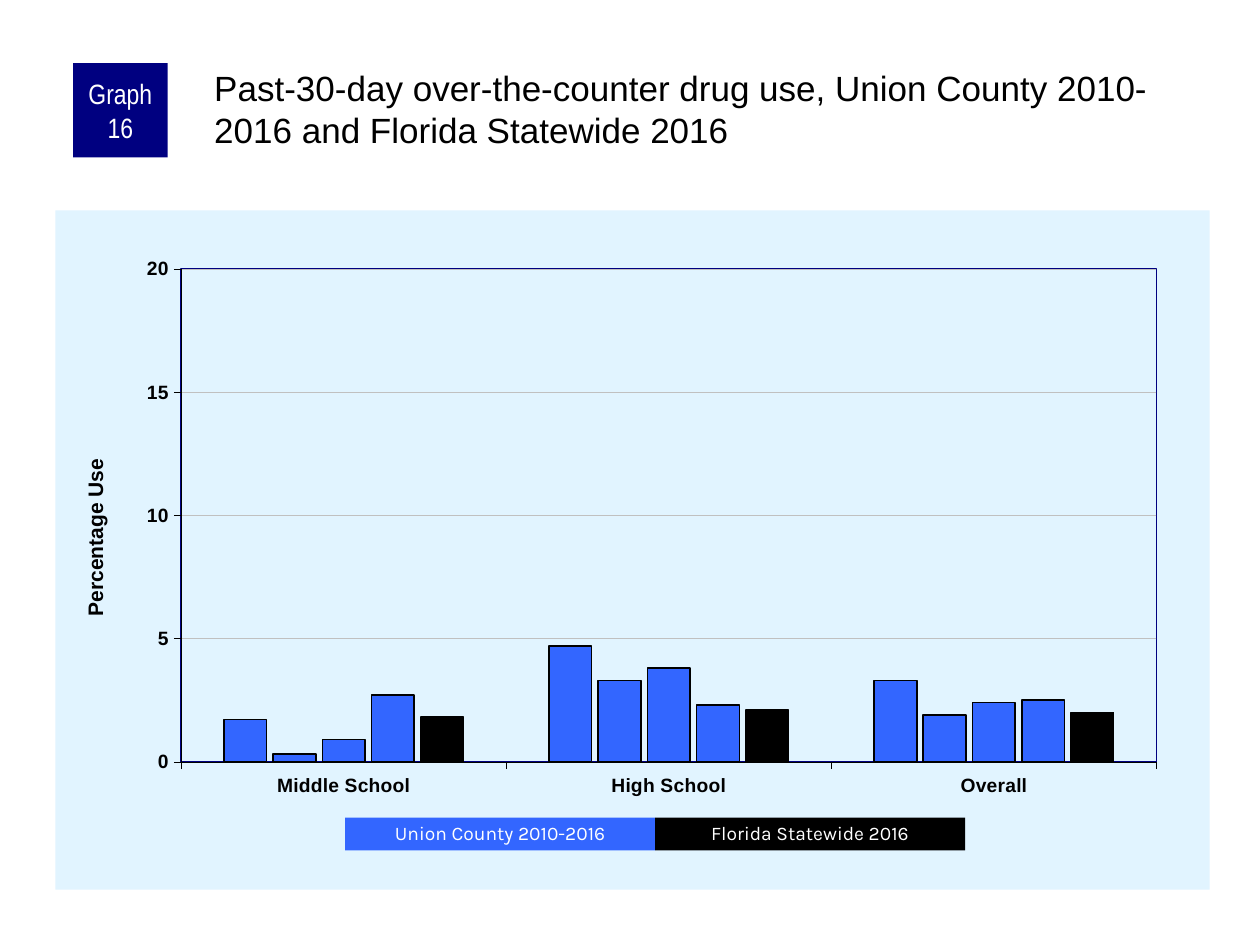
from lxml import etree
from pptx import Presentation
from pptx.chart.data import CategoryChartData
from pptx.dml.color import RGBColor
from pptx.enum import chart as charts, shapes, text
from pptx.oxml import parse_xml
from pptx.oxml.ns import nsdecls, qn
from pptx.util import Inches, Pt

COLORS = {"navy": "000080", "blue": "3366FF", "black": "000000",
          "white": "FFFFFF", "panel": "E1F4FF", "grid": "C0C0C0"}

TITLE = ("Past-30-day over-the-counter drug use, Union County 2010-2016 "
         "and Florida Statewide 2016")
SCHOOLS = ["Middle School", "High School", "Overall"]
# name, values, fill, outline width
SERIES = [
    ("Series 1", (1.7, 4.7, 3.3), "blue", 0.75),
    ("Series 2", (0.3, 3.3, 1.9), "blue", 1),
    ("Series 3", (0.9, 3.8, 2.4), "blue", 1),
    ("Series 4", (2.7, 2.3, 2.5), "blue", 1),
    ("Series 5", (1.8, 2.1, 2.0), "black", 1),
]
LEGEND = [("Union County 2010-2016", "blue"), ("Florida Statewide 2016", "black")]
LEGEND_LEFT, LEGEND_TOP, LEGEND_WIDTH, LEGEND_HEIGHT = 2.74, 6.49, 2.46, 0.26
PLOT_AREA = {"x": 0.109, "y": 0.086, "w": 0.845, "h": 0.726}
AXIS_TITLE = {"x": 0.02, "y": 0.36}


def rgb(name):
    return RGBColor.from_string(COLORS[name])


def style_font(font, name, size, color, bold=False):
    for key, value in {"name": name, "size": Pt(size), "bold": bold}.items():
        setattr(font, key, value)
    font.color.rgb = rgb(color)


def style_line(line, color, width):
    line.color.rgb = rgb(color)
    line.width = Pt(width)


def fill_text(shape, words, font, size, color, margins=None, **paragraph_format):
    frame = shape.text_frame
    frame.word_wrap = True
    for side, value in (margins or {}).items():
        setattr(frame, f"margin_{side}", Inches(value))
    para = frame.paragraphs[0]
    for key, value in paragraph_format.items():
        setattr(para, key, value)
    span = para.add_run()
    span.text = words
    style_font(span.font, font, size, color)


def add_label(page, place, words, fill, font, size, **options):
    """Add a filled rectangle with white centred text."""
    box = page.shapes.add_shape(shapes.MSO_SHAPE.RECTANGLE, *map(Inches, place))
    box.shadow.inherit = False
    box.fill.solid()
    box.fill.fore_color.rgb = rgb(fill)
    box.line.fill.background()
    box.text_frame.vertical_anchor = text.MSO_ANCHOR.MIDDLE
    fill_text(box, words, font, size, "white",
              alignment=text.PP_ALIGN.CENTER, **options)


def set_layout(part, position, values, **modes):
    """Fix the place of a chart part, in fractions of the chart.

    The layout element becomes the child of part at the given position.
    """
    for old in part.findall(qn("c:layout")):
        part.remove(old)
    layout = etree.Element(qn("c:layout"))
    part.insert(position, layout)
    manual = etree.SubElement(layout, qn("c:manualLayout"))
    settings = {**modes, "xMode": "edge", "yMode": "edge", **values}
    for key, value in settings.items():
        etree.SubElement(manual, qn(f"c:{key}")).set("val", str(value))


def shape_properties(content):
    return parse_xml(f'<c:spPr {nsdecls("c", "a")}>{content}</c:spPr>')


def solid(name):
    return f'<a:solidFill><a:srgbClr val="{COLORS[name]}"/></a:solidFill>'


def add_drug_use_chart(page):
    data = CategoryChartData()
    data.categories = SCHOOLS
    for name, values, *_ in SERIES:
        data.add_series(name, values)
    chart = page.shapes.add_chart(
        charts.XL_CHART_TYPE.COLUMN_CLUSTERED,
        *map(Inches, (0.44, 1.67, 9.16, 5.39)), data).chart
    chart.has_legend = chart.has_title = False
    style_font(chart.font, "Arial", 8, "black")

    plot = chart.plots[0]
    plot.gap_width, plot.overlap, plot.vary_by_categories = 200, -15, False
    for series, (_, _, fill, width) in zip(plot.series, SERIES):
        series.format.fill.solid()
        series.format.fill.fore_color.rgb = rgb(fill)
        style_line(series.format.line, "black", width)

    values = chart.value_axis
    for axis in (chart.category_axis, values):
        axis.major_tick_mark = charts.XL_TICK_MARK.OUTSIDE
        axis.minor_tick_mark = charts.XL_TICK_MARK.NONE
        style_font(axis.tick_labels.font, "Arial", 11, "black", True)
        style_line(axis.format.line, "black", 0.25)
    scale = {"minimum_scale": 0, "maximum_scale": 20, "major_unit": 5,
             "has_major_gridlines": True}
    for key, value in scale.items():
        setattr(values, key, value)
    style_line(values.major_gridlines.format.line, "grid", 0.25)

    title = values.axis_title
    span = title.text_frame.paragraphs[0].add_run()
    span.text = "Percentage Use"
    style_font(span.font, "Arial", 12, "black", True)
    turned = title._element.find(".//" + qn("a:bodyPr"))
    turned.set("rot", "-5400000")
    turned.set("vert", "horz")
    set_layout(title._element, 1, AXIS_TITLE)

    body = chart._chartSpace.chart
    area = body.plotArea
    set_layout(area, 0, PLOT_AREA, layoutTarget="inner")
    area.append(shape_properties(
        f'<a:noFill/><a:ln w="{Pt(1)}">{solid("navy")}</a:ln>'))
    body.addnext(shape_properties(solid("panel") + "<a:ln><a:noFill/></a:ln>"))


def main():
    deck = Presentation()
    deck.slide_width, deck.slide_height = Inches(10), Inches(7.5)
    page = deck.slides.add_slide(deck.slide_layouts[6])

    add_drug_use_chart(page)
    add_label(page, (0.58, 0.5, 0.75, 0.75), "Graph 16", "navy", "Arial Narrow", 16,
              margins={"left": 0.05, "top": 0, "right": 0.05, "bottom": 0})
    heading = page.shapes.add_textbox(*map(Inches, (1.67, 0.5, 7.92, 0.83)))
    fill_text(heading, TITLE, "Arial", 20, "black",
              margins={"left": 0.03, "top": 0.03, "right": 0, "bottom": 0})
    for index, (words, fill) in enumerate(LEGEND):
        place = (LEGEND_LEFT + index * LEGEND_WIDTH, LEGEND_TOP,
                 LEGEND_WIDTH, LEGEND_HEIGHT)
        add_label(page, place, words, fill, "Karla", 11, line_spacing=0.9)

    deck.save("out.pptx")


if __name__ == "__main__":
    main()
